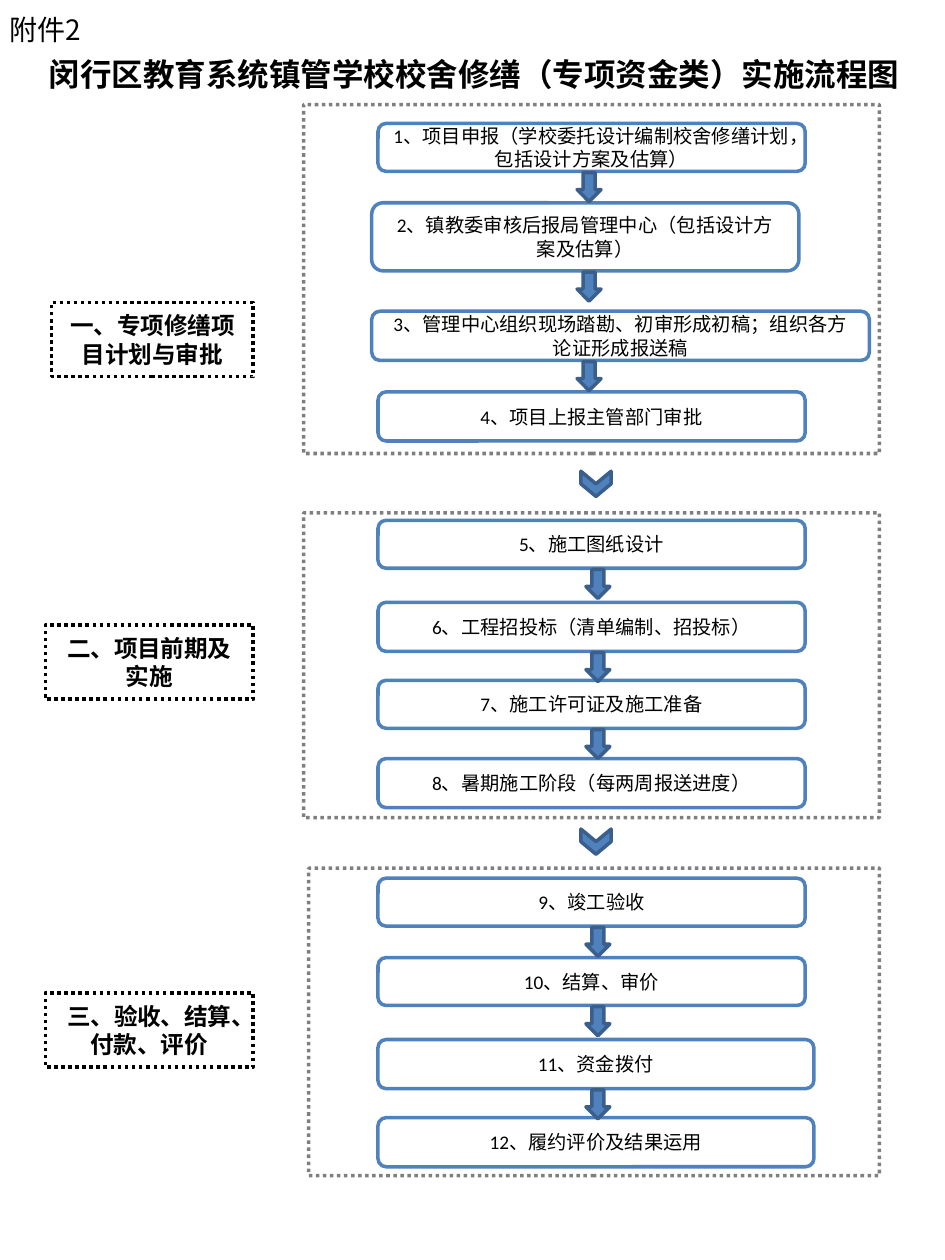
from dataclasses import dataclass

from lxml import etree
from pptx import Presentation
from pptx.dml.color import RGBColor
from pptx.enum import dml, shapes, text
from pptx.oxml import ns
from pptx.util import Inches, Pt


@dataclass(frozen=True)
class Theme:
    paper: str = "FFFFFF"
    ink: str = "000000"
    blue: str = "4F81BD"
    dark_blue: str = "3A5F8C"
    font: str = "Calibri"
    note_font: str = "Noto Sans CJK SC"
    title_size: float = 18
    note_size: float = 16
    phase_size: float = 13.5
    step_size: float = 11
    line_width: float = 2


@dataclass(frozen=True)
class Box:
    left: float
    top: float
    width: float
    height: float


@dataclass(frozen=True)
class Step:
    caption: str
    top: float
    height: float = 0.38
    left: float = 3
    width: float = 3.39


@dataclass(frozen=True)
class Phase:
    caption: str
    label: Box
    frame: Box
    arrow_left: float
    steps: tuple[Step, ...]


THEME = Theme()
ARROW_WIDTH, ARROW_HEIGHT, ARROW_GAP = 0.19, 0.23, 0.01
CHEVRONS = (Box(4.63, 3.72, 0.2, 0.24), Box(4.63, 6.56, 0.2, 0.24))

PHASES = (
    Phase("一、专项修缮项目计划与审批", Box(0.41, 2.4, 1.6, 0.59),
          Box(2.41, 0.83, 4.57, 2.77), 4.58, (
              Step("1、项目申报（学校委托设计编制校舍修缮计划，包括设计方案及估算）", 0.98),
              Step("2、镇教委审核后报局管理中心（包括设计方案及估算）", 1.61, 0.54, left=2.95),
              Step("3、管理中心组织现场踏勘、初审形成初稿；组织各方论证形成报送稿", 2.47, 0.39,
                   left=2.95, width=3.95),
              Step("4、项目上报主管部门审批", 3.11, 0.39))),
    Phase("二、项目前期及实施", Box(0.36, 4.96, 1.65, 0.59),
          Box(2.41, 4.07, 4.57, 2.42), 4.65, (
              Step("5、施工图纸设计", 4.13),
              Step("6、工程招投标（清单编制、招投标）", 4.78, 0.39),
              Step("7、施工许可证及施工准备", 5.4),
              Step("8、暑期施工阶段（每两周报送进度）", 6.02, 0.39))),
    Phase("三、验收、结算、付款、评价", Box(0.36, 7.88, 1.65, 0.59),
          Box(2.45, 6.89, 4.53, 2.44), 4.65, (
              Step("9、竣工验收", 6.97),
              Step("10、结算、审价", 7.6),
              Step("11、资金拨付", 8.25, 0.39, width=3.46),
              Step("12、履约评价及结果运用", 8.87, 0.39, width=3.46))),
)


def place(box: Box) -> tuple:
    return tuple(Inches(value) for value in (box.left, box.top, box.width, box.height))


def write(shape, caption: str, *, size: float, bold: bool = False, font: str = THEME.font,
          align=text.PP_ALIGN.CENTER, anchor=text.MSO_ANCHOR.MIDDLE) -> None:
    frame = shape.text_frame
    frame.word_wrap = True
    frame.vertical_anchor = anchor
    paragraph = frame.paragraphs[0]
    paragraph.alignment = align
    run = paragraph.add_run()
    run.text = caption
    run.font.size = Pt(size)
    run.font.bold = bold
    run.font.name = font
    run.font.color.rgb = RGBColor.from_string(THEME.ink)
    east_asian = etree.SubElement(run.font._element, ns.qn("a:ea"))
    east_asian.set("typeface", THEME.note_font)


def add_heading(slide, box: Box, caption: str, **style) -> None:
    shape = slide.shapes.add_textbox(*place(box))
    write(shape, caption, align=text.PP_ALIGN.LEFT, anchor=text.MSO_ANCHOR.TOP, **style)


def add_figure(slide, kind, box: Box, fill: str, line: str, dotted: bool = False):
    shape = slide.shapes.add_shape(kind, *place(box))
    shape.shadow.inherit = False
    shape.fill.solid()
    shape.fill.fore_color.rgb = RGBColor.from_string(fill)
    shape.line.color.rgb = RGBColor.from_string(line)
    shape.line.width = Pt(THEME.line_width)
    if dotted:
        shape.line.dash_style = dml.MSO_LINE.ROUND_DOT
    return shape


def add_frame(slide, box: Box) -> None:
    shape = add_figure(slide, shapes.MSO_SHAPE.RECTANGLE, box, THEME.paper, THEME.ink, dotted=True)
    color = shape.line._ln.find(".//" + ns.qn("a:srgbClr"))
    etree.SubElement(color, ns.qn("a:alpha")).set("val", "50000")


def add_step(slide, step: Step) -> None:
    box = Box(step.left, step.top, step.width, step.height)
    shape = add_figure(slide, shapes.MSO_SHAPE.ROUNDED_RECTANGLE, box, THEME.paper, THEME.blue)
    write(shape, step.caption, size=THEME.step_size)


def add_phase(slide, phase: Phase) -> None:
    add_frame(slide, phase.frame)
    label = add_figure(slide, shapes.MSO_SHAPE.RECTANGLE, phase.label,
                       THEME.paper, THEME.ink, dotted=True)
    write(label, phase.caption, size=THEME.phase_size, bold=True)
    for step in phase.steps:
        add_step(slide, step)
    for step in phase.steps[:-1]:
        top = step.top + step.height + ARROW_GAP
        add_figure(slide, shapes.MSO_SHAPE.DOWN_ARROW,
                   Box(phase.arrow_left, top, ARROW_WIDTH, ARROW_HEIGHT),
                   THEME.blue, THEME.dark_blue)


def main() -> None:
    presentation = Presentation()
    presentation.slide_width = Inches(7.5)
    presentation.slide_height = Inches(10)
    slide = presentation.slides.add_slide(presentation.slide_layouts[6])
    slide.background.fill.solid()
    slide.background.fill.fore_color.rgb = RGBColor.from_string(THEME.paper)

    add_heading(slide, Box(-0.02, 0.05, 1.15, 0.37), "附件2",
                size=THEME.note_size, font=THEME.note_font)
    add_heading(slide, Box(0.29, 0.39, 7.16, 0.4),
                "闵行区教育系统镇管学校校舍修缮（专项资金类）实施流程图",
                size=THEME.title_size, bold=True)
    for phase in PHASES:
        add_phase(slide, phase)
    for box in CHEVRONS:
        chevron = add_figure(slide, shapes.MSO_SHAPE.CHEVRON, box, THEME.blue, THEME.dark_blue)
        chevron.rotation = 90

    presentation.save("out.pptx")


if __name__ == "__main__":
    main()
